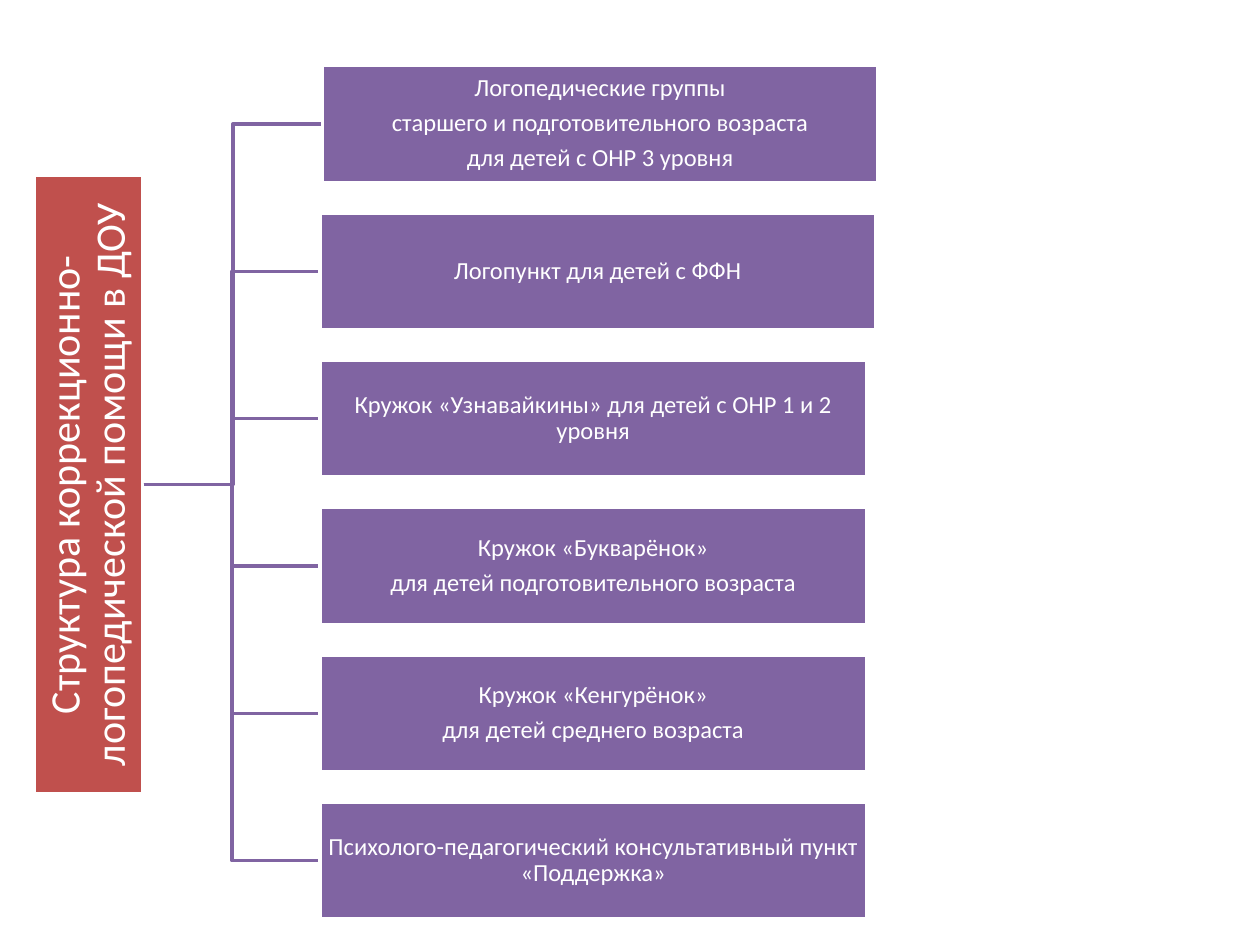
import pptx
import pptx.util
import pptx.dml.color
import pptx.enum.shapes
import pptx.enum.text

Cm, Pt = pptx.util.Cm, pptx.util.Pt
RGB = pptx.dml.color.RGBColor.from_string

THEME = {
    "font": "Calibri",
    "title_size": 24,
    "box_size": 14,
    "title_fill": RGB("C0504D"),
    "box_fill": RGB("8064A2"),
    "white": RGB("FFFFFF"),
    "line": Pt(2),
}


def fill_box(sp, lines, fill, size, inset):
    """Give a shape its fill, white border and centred text."""
    sp.fill.solid()
    sp.fill.fore_color.rgb = fill
    sp.line.color.rgb = THEME["white"]
    sp.line.width = THEME["line"]
    tf = sp.text_frame
    tf.word_wrap = True
    tf.auto_size = pptx.enum.text.MSO_AUTO_SIZE.NONE
    tf.vertical_anchor = pptx.enum.text.MSO_ANCHOR.MIDDLE
    tf.margin_left = tf.margin_right = tf.margin_top = tf.margin_bottom = inset
    tf.text = "\n".join(lines)
    for p in tf.paragraphs:
        p.alignment = pptx.enum.text.PP_ALIGN.CENTER
        p.line_spacing = 0.9
        p.space_before = Pt(0)
        p.space_after = Pt(0.35 * size)
        p.font.name = THEME["font"]
        p.font.size = Pt(size)
        p.font.color.rgb = THEME["white"]


prs = pptx.Presentation()
prs.slide_width, prs.slide_height = Cm(25.4), Cm(19.05)
s = prs.slides.add_slide(prs.slide_layouts[5])

# Vertical title
title = s.shapes.title
title.left, title.top = Cm(-4.45), Cm(8.68)
title.width, title.height = Cm(12.47), Cm(2.18)
title.rotation = 270
fill_box(title, ["Структура коррекционно-логопедической помощи в ДОУ"],
         THEME["title_fill"], THEME["title_size"], Cm(0.04))

# Branches: left, width, lines of text
branches = [
    (6.5, 11.2, ["Логопедические группы",
                 "старшего и подготовительного возраста",
                 "для детей с ОНР 3 уровня"]),
    (6.45, 11.2, ["Логопункт для детей с ФФН"]),
    (6.45, 11.02, ["Кружок «Узнавайкины» для детей с ОНР 1 и 2 уровня"]),
    (6.45, 11.02, ["Кружок «Букварёнок»",
                   "для детей подготовительного возраста"]),
    (6.45, 11.02, ["Кружок «Кенгурёнок»", "для детей среднего возраста"]),
    (6.45, 11.02, ["Психолого-педагогический консультативный пункт «Поддержка»"]),
]
first_top, pitch, box_height = 1.32, 2.97, 2.36
root_x, root_y = 2.9, 9.77

for i, (left, width, lines) in enumerate(branches):
    top = first_top + i * pitch
    mid_x, mid_y = (root_x + left) / 2, top + box_height / 2

    # Elbow line from the title to the box
    fb = s.shapes.build_freeform(Cm(root_x), Cm(root_y))
    fb.add_line_segments([(Cm(mid_x), Cm(root_y)), (Cm(mid_x), Cm(mid_y)),
                          (Cm(left), Cm(mid_y))], close=False)
    elbow = fb.convert_to_shape()
    elbow.shadow.inherit = False
    elbow.fill.background()
    elbow.line.color.rgb = THEME["box_fill"]
    elbow.line.width = THEME["line"]

    # Box
    sp = s.shapes.add_shape(pptx.enum.shapes.MSO_SHAPE.RECTANGLE,
                            Cm(left), Cm(top), Cm(width), Cm(box_height))
    sp.shadow.inherit = False
    fill_box(sp, lines, THEME["box_fill"], THEME["box_size"], Cm(0.03))

prs.save("out.pptx")
